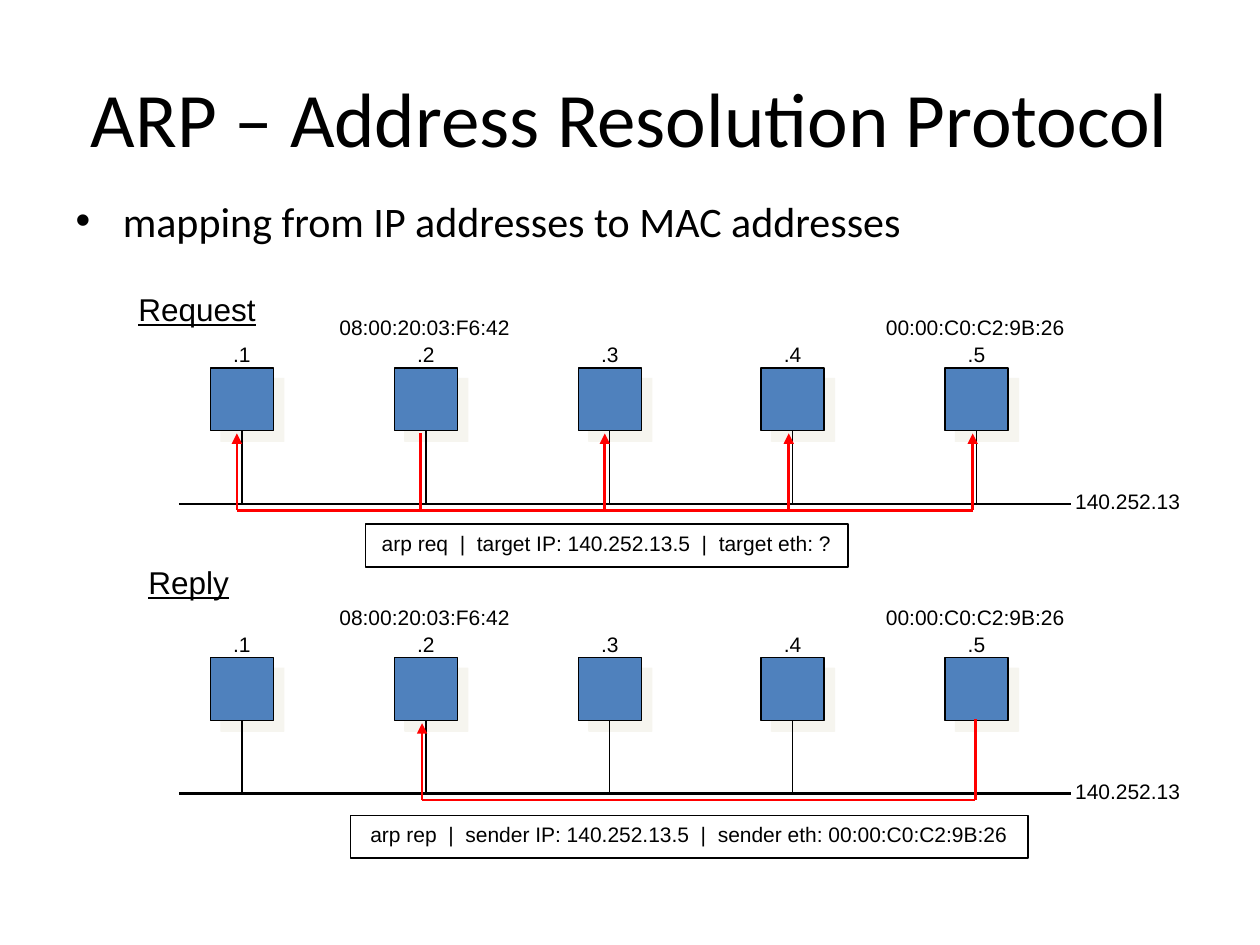
from lxml.etree import SubElement
from pptx import Presentation
from pptx.dml.color import RGBColor
from pptx.enum.shapes import MSO_CONNECTOR, MSO_SHAPE
from pptx.enum.text import MSO_ANCHOR, PP_ALIGN
from pptx.oxml.ns import qn
from pptx.util import Pt

SCALE = 9144
SIDE = 50
LAST = 583
BLACK, WHITE, RED, BLUE, SHADE = "000000", "FFFFFF", "FF0000", "4F81BD", "EEECE1"


def px(num):
    return round(num) * SCALE


def hue(code):
    return RGBColor.from_string(code)


def place(shape, box):
    shape.left, shape.top, shape.width, shape.height = map(px, box)


def write(shape, text, size=12, font="Arial", align=PP_ALIGN.CENTER,
          anchor=MSO_ANCHOR.TOP, under=None, wrap=False):
    frame = shape.text_frame
    frame.word_wrap = wrap
    frame.vertical_anchor = anchor
    para = frame.paragraphs[0]
    para.alignment = align
    run = para.add_run()
    run.text = text
    run.font.size = Pt(size)
    run.font.name = font
    run.font.underline = under
    run.font.color.rgb = hue(BLACK)


def label(slide, box, text, **style):
    write(slide.shapes.add_textbox(*map(px, box)), text, **style)


def rect(slide, box, fill):
    shape = slide.shapes.add_shape(MSO_SHAPE.RECTANGLE, *map(px, box))
    shape.shadow.inherit = False
    shape.fill.solid()
    shape.fill.fore_color.rgb = hue(fill)
    shape.line.color.rgb = hue(BLACK)
    shape.line.width = Pt(0.75)
    return shape


def shade(shape):
    effects = shape._element.spPr.find(qn("a:effectLst"))
    outer = SubElement(effects, qn("a:outerShdw"), dist=str(Pt(8.5)),
                       dir="2700000", algn="ctr", rotWithShape="0")
    color = SubElement(outer, qn("a:srgbClr"), val=SHADE)
    SubElement(color, qn("a:alpha"), val="50000")


def line(slide, start, end, color=BLACK, width=1.5, arrow=False):
    link = slide.shapes.add_connector(MSO_CONNECTOR.STRAIGHT, *map(px, (*start, *end)))
    link.line.color.rgb = hue(color)
    link.line.width = Pt(width)
    if arrow:
        SubElement(link.line._get_or_add_ln(), qn("a:tailEnd"), type="triangle")
    SubElement(link._element.spPr, qn("a:effectLst"))
    return link


def network(slide, box):
    left, top, width, height = box
    base = top + height
    line(slide, (left, base), (left + width, base))
    label(slide, (left + 693, base - 17, 120, 30), "140.252.13")
    macs = {2: "08:00:20:03:F6:42", 5: "00:00:C0:C2:9B:26"}
    for num in range(1, 6):
        x = left + 25 + round((num - 1) * LAST / 4)
        mid = x + SIDE // 2
        node = rect(slide, (x, top + 47, SIDE, SIDE), BLUE)
        shade(node)
        drop = line(slide, (mid, top + 97), (mid, base), width=0.75)
        drop.begin_connect(node, 2)
        label(slide, (mid - 20, top + 21, 40, 30), f".{num}")
        if num in macs:
            label(slide, (mid - 101, top, 200, 30), macs[num])


def request(slide, box):
    left, top, width, height = box
    tip, bus = top, top + height
    source = left + 146
    line(slide, (source, tip), (source, bus), RED)
    line(slide, (left, bus), (left + width, bus), RED)
    for step in (0, 2, 3, 4):
        x = left + round(step * width / 4)
        line(slide, (x, bus), (x, tip), RED, arrow=True)


def reply(slide, box):
    left, top, width, height = box
    right, bus = left + width, top + height
    line(slide, (right, top), (right, bus), RED)
    line(slide, (right, bus), (left, bus), RED)
    line(slide, (left, bus), (left, top + 3), RED, arrow=True)


def header(slide, box):
    left, top, width, height = box
    title, body = slide.placeholders[0], slide.placeholders[1]
    place(title, (left, top, width, 125))
    write(title, "ARP – Address Resolution Protocol", size=44, font="Calibri",
          anchor=MSO_ANCHOR.MIDDLE, wrap=True)
    place(body, (left, top + 120, width, height - 120))
    write(body, "mapping from IP addresses to MAC addresses", size=24,
          font="Calibri", align=PP_ALIGN.LEFT, wrap=True)


def main():
    deck = Presentation()
    deck.slide_width, deck.slide_height = px(1000), px(750)
    slide = deck.slides.add_slide(deck.slide_layouts[1])
    header(slide, (50, 30, 900, 177))
    parts = (
        ("Request", (100, 225, 120, 40), (142, 245, 708, 155),
         request, (188, 344, 584, 61), (290, 416, 383, 34),
         "arp req  |  target IP: 140.252.13.5  |  target eth: ?"),
        ("Reply", (108, 442, 90, 40), (142, 475, 708, 155),
         reply, (335, 571, 439, 64), (278, 647, 538, 34),
         "arp rep  |  sender IP: 140.252.13.5  |  sender eth: 00:00:C0:C2:9B:26"),
    )
    for name, head, net, route, track, note, text in parts:
        label(slide, head, name, size=18, align=PP_ALIGN.LEFT, under=True)
        network(slide, net)
        route(slide, track)
        write(rect(slide, note, WHITE), text)
    deck.save("out.pptx")


if __name__ == "__main__":
    main()
